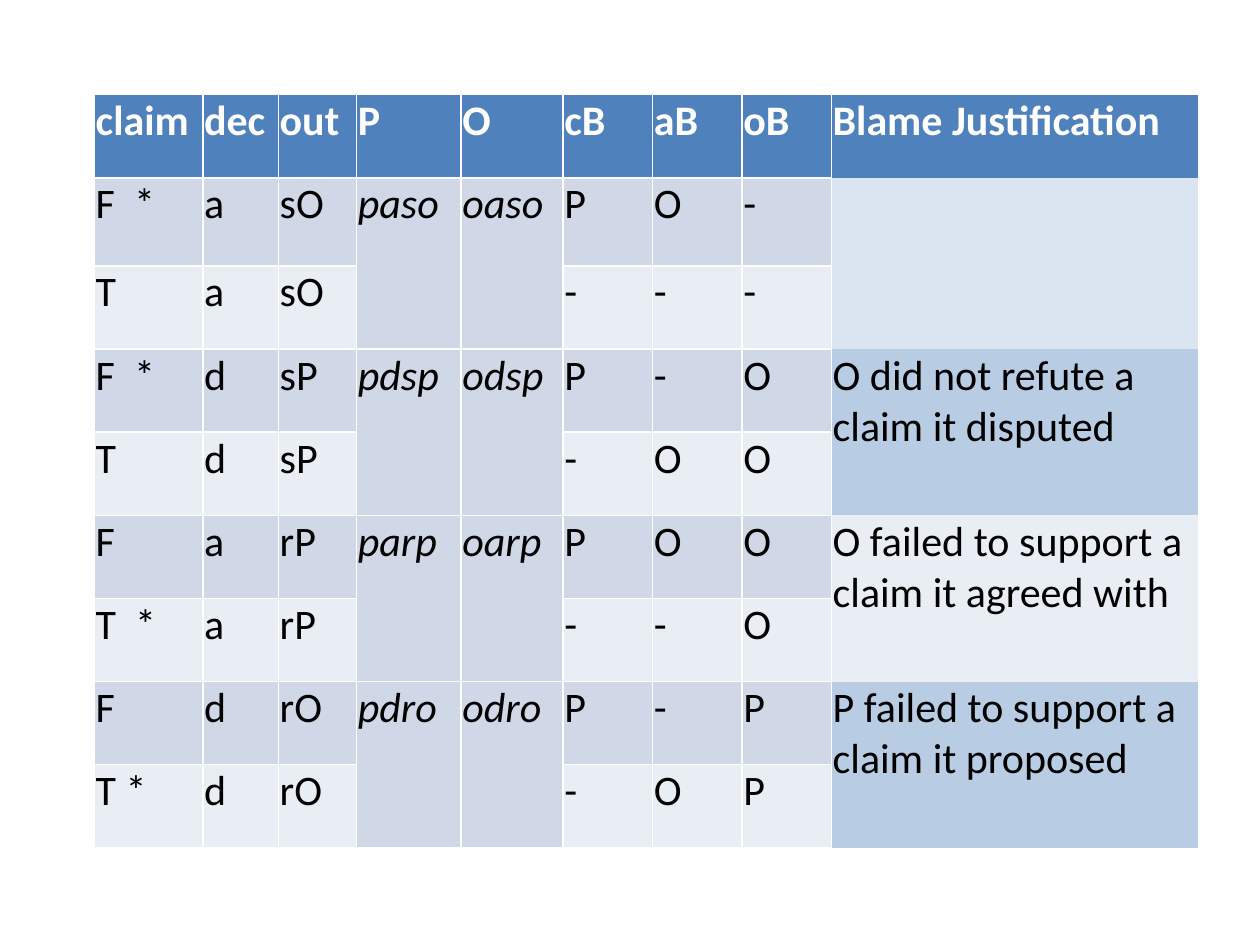
from dataclasses import dataclass
from typing import Any

from lxml import etree
from pptx import Presentation
from pptx import util as u
from pptx.dml.color import RGBColor
from pptx.enum import text
from pptx.oxml import ns

WHITE = RGBColor(0xFF, 0xFF, 0xFF)
BLACK = RGBColor(0, 0, 0)
HEADER = RGBColor(0x4F, 0x81, 0xBD)
BAND_DARK = RGBColor(0xD0, 0xD8, 0xE8)
BAND_LIGHT = RGBColor(0xE9, 0xED, 0xF4)
REASON_FILLS = [RGBColor(0xDB, 0xE5, 0xF1), RGBColor(0xB8, 0xCC, 0xE4),
                BAND_LIGHT, RGBColor(0xB8, 0xCC, 0xE4)]

COLUMN_WIDTHS = [0.86, 0.6, 0.62, 0.83, 0.81, 0.71, 0.71, 0.71, 2.91]
ROW_HEIGHTS = [0.66, 0.7] + [0.66] * 7
MOVE_COLUMNS = (3, 4)
REASON_COLUMN = 8

HEADINGS = ["claim", "dec", "out", "P", "O", "cB", "aB", "oB",
            "Blame Justification"]
# Each case: decision, outcome, both moves, reason, then two (claim, blames) rows
CASES = [
    ("a", "sO", "paso", "oaso", "", ("F  *", "PO-"), ("T", "---")),
    ("d", "sP", "pdsp", "odsp", "O did not refute a claim it disputed",
     ("F  *", "P-O"), ("T", "-OO")),
    ("a", "rP", "parp", "oarp", "O failed to support a claim it agreed with",
     ("F", "POO"), ("T  *", "--O")),
    ("d", "rO", "pdro", "odro", "P failed to support a claim it proposed",
     ("F", "P-P"), ("T *", "-OP")),
]


@dataclass
class TableSlide:
    deck: Any
    page: Any
    font: str = "Calibri"
    size: int = 24

    def table(self, left, top, widths, heights):
        """Add a plain table; left and top are shares of the slide's size."""
        frame = self.page.shapes.add_table(
            len(heights), len(widths),
            int(self.deck.slide_width * left), int(self.deck.slide_height * top),
            u.Inches(sum(widths)), u.Inches(sum(heights)))
        grid = frame.table
        grid.first_row = grid.horz_banding = False
        for column, width in zip(grid.columns, widths):
            column.width = u.Inches(width)
        for row, height in zip(grid.rows, heights):
            row.height = u.Inches(height)
        return grid

    def cell(self, cell, words, fill, borders, **font):
        layout = {"margin_left": u.Inches(0.01), "margin_right": u.Inches(0.01),
                  "margin_top": u.Inches(0.01), "margin_bottom": 0,
                  "vertical_anchor": text.MSO_ANCHOR.TOP}
        for name, value in layout.items():
            setattr(cell, name, value)
        self.borders(cell, borders)
        cell.fill.solid()
        cell.fill.fore_color.rgb = fill
        para = cell.text_frame.paragraphs[0]
        para.font.size = u.Pt(self.size)
        if words:
            self.span(para, words, **font)

    def span(self, para, words, color=BLACK, **font):
        span = para.add_run()
        span.text = words
        style = {"name": self.font, "size": u.Pt(self.size), **font}
        for name, value in style.items():
            setattr(span.font, name, value)
        span.font.color.rgb = color

    def borders(self, cell, widths):
        """Draw white sides of the given point widths; 0 hides a side."""
        properties = cell._tc.get_or_add_tcPr()
        for side in "LRTB":
            width = widths[side]
            line = etree.SubElement(properties, ns.qn(f"a:ln{side}"),
                                    w=str(int(u.Pt(width))))
            if width:
                paint = etree.SubElement(line, ns.qn("a:solidFill"))
                etree.SubElement(paint, ns.qn("a:srgbClr"), val=str(WHITE))
            else:
                etree.SubElement(line, ns.qn("a:noFill"))


def body_rows():
    for decision, outcome, move_p, move_o, reason, first, second in CASES:
        for (claim, blames), merged in ((first, (move_p, move_o, reason)),
                                        (second, ("", "", ""))):
            yield [claim, decision, outcome, *merged[:2], *blames, merged[2]]


def cell_fill(row, column):
    if row == 0:
        return HEADER
    if column == REASON_COLUMN:
        return REASON_FILLS[(row - 1) // 2]
    return BAND_DARK if row % 2 or column in MOVE_COLUMNS else BAND_LIGHT


def cell_borders(row, column):
    if column == REASON_COLUMN:
        return {"L": 1, "R": 0, "T": 0, "B": 0}
    return {"L": 1, "R": 1, "T": 1.5 if row == 1 else 1,
            "B": 1.5 if row == 0 else 1}


def main():
    deck = Presentation()
    deck.slide_width, deck.slide_height = u.Inches(10), u.Inches(7.5)
    slide = TableSlide(deck, deck.slides.add_slide(deck.slide_layouts[6]))
    blame = slide.table(0.075, 0.1, COLUMN_WIDTHS, ROW_HEIGHTS)
    for row, words in enumerate([HEADINGS, *body_rows()]):
        for column, word in enumerate(words):
            font = ({"bold": True, "color": WHITE} if row == 0
                    else {"italic": column in MOVE_COLUMNS})
            slide.cell(blame.cell(row, column), word, cell_fill(row, column),
                       cell_borders(row, column), **font)
    for row in range(1, len(ROW_HEIGHTS), 2):
        for column in (*MOVE_COLUMNS, REASON_COLUMN):
            blame.cell(row, column).merge(blame.cell(row + 1, column))
    deck.save("out.pptx")


if __name__ == "__main__":
    main()
